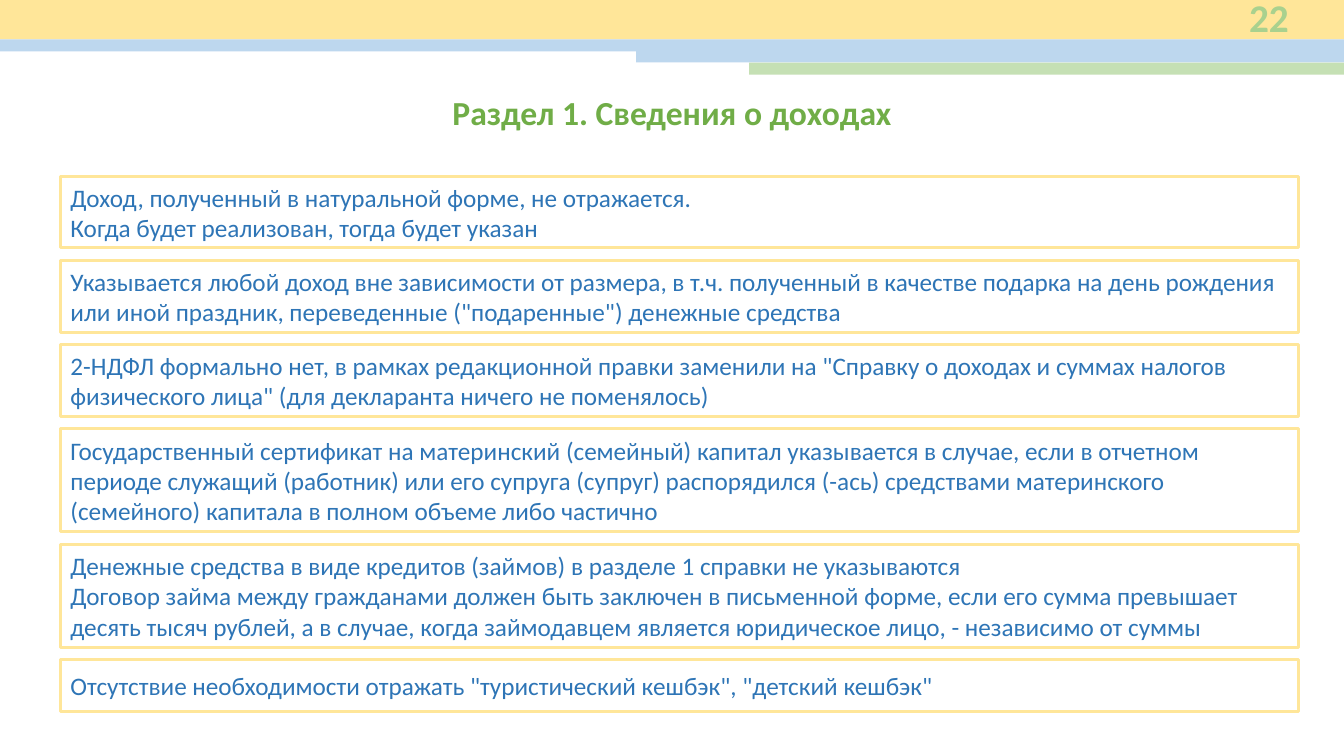
"""Build the slide on reporting income in section 1 of the declaration."""
import pptx
import pptx.util
import pptx.dml.color
import pptx.enum.shapes
import pptx.enum.text

Inches = pptx.util.Inches
Pt = pptx.util.Pt
RGB = pptx.dml.color.RGBColor.from_string
ALIGN = pptx.enum.text.PP_ALIGN
MIDDLE = pptx.enum.text.MSO_ANCHOR.MIDDLE

COLORS = {
    "yellow": "FFE699",
    "blue": "BDD7EE",
    "green": "C5E0B4",
    "number": "A9D18E",
    "title": "70AD47",
    "text": "2E75B6",
}


def add_rect(slide, x, y, w, h):
    sp = slide.shapes.add_shape(
        pptx.enum.shapes.MSO_SHAPE.RECTANGLE,
        Inches(x), Inches(y), Inches(w), Inches(h))
    sp.shadow.inherit = False
    return sp


def write(tf, paragraphs, color, align, **font):
    tf.word_wrap = True
    for i, text in enumerate(paragraphs):
        p = tf.paragraphs[0] if i == 0 else tf.add_paragraph()
        p.text = text
        p.alignment = align
        for r in p.runs:
            r.font.color.rgb = RGB(COLORS[color])
            for name, value in {"name": "Calibri", **font}.items():
                setattr(r.font, name, value)


prs = pptx.Presentation()
prs.slide_width = Inches(13.33)
prs.slide_height = Inches(7.5)
slide = prs.slides.add_slide(prs.slide_layouts[6])

bands = [
    (0, 0, 0.39, "yellow"),
    (0, 0.39, 0.12, "blue"),
    (6.31, 0.5, 0.12, "blue"),
    (7.43, 0.62, 0.12, "green"),
]
for x, y, h, color in bands:
    sp = add_rect(slide, x, y, 13.33 - x, h)
    sp.fill.solid()
    sp.fill.fore_color.rgb = RGB(COLORS[color])
    sp.line.fill.background()

headings = [
    ("22", 11.63, -0.05, 1.25, 0.44, "number", ALIGN.RIGHT, 28, MIDDLE),
    ("Раздел 1. Сведения о доходах", 0.6, 0.86, 12.13, 0.5, "title", ALIGN.CENTER, 24,
     pptx.enum.text.MSO_ANCHOR.TOP),
]
for text, x, y, w, h, color, align, size, anchor in headings:
    tf = slide.shapes.add_textbox(Inches(x), Inches(y), Inches(w), Inches(h)).text_frame
    tf.vertical_anchor = anchor
    write(tf, [text], color, align, size=Pt(size), bold=True)

notes = [
    (0.71, ["Доход, полученный в натуральной форме, не отражается.\n"
            "Когда будет реализован, тогда будет указан"]),
    (0.71, ["Указывается любой доход вне зависимости от размера, в т.ч. полученный в качестве "
            "подарка на день рождения или иной праздник, переведенные (\"подаренные\") "
            "денежные средства"]),
    (0.71, ["2-НДФЛ формально нет, в рамках редакционной правки заменили на \"Справку о доходах "
            "и суммах налогов физического лица\" (для декларанта ничего не поменялось)"]),
    (1.02, ["Государственный сертификат на материнский (семейный) капитал указывается в случае, "
            "если в отчетном периоде служащий (работник) или его супруга (супруг) распорядился "
            "(-ась) средствами материнского (семейного) капитала в полном объеме либо частично"]),
    (1.02, ["Денежные средства в виде кредитов (займов) в разделе 1 справки не указываются",
            "Договор займа между гражданами должен быть заключен в письменной форме, если его "
            "сумма превышает десять тысяч рублей, а в случае, когда займодавцем является "
            "юридическое лицо, - независимо от суммы"]),
    (0.51, ["Отсутствие необходимости отражать \"туристический кешбэк\", \"детский кешбэк\""]),
]
gap = 1 / 8
y = 1.75
for h, paragraphs in notes:
    sp = add_rect(slide, 0.6, y, 12.28, h)
    sp.fill.background()
    sp.line.color.rgb = RGB(COLORS["yellow"])
    sp.line.width = Pt(2.25)
    sp.text_frame.vertical_anchor = MIDDLE
    write(sp.text_frame, paragraphs, "text", ALIGN.LEFT, size=Pt(18))
    y += h + gap

prs.save("out.pptx")
